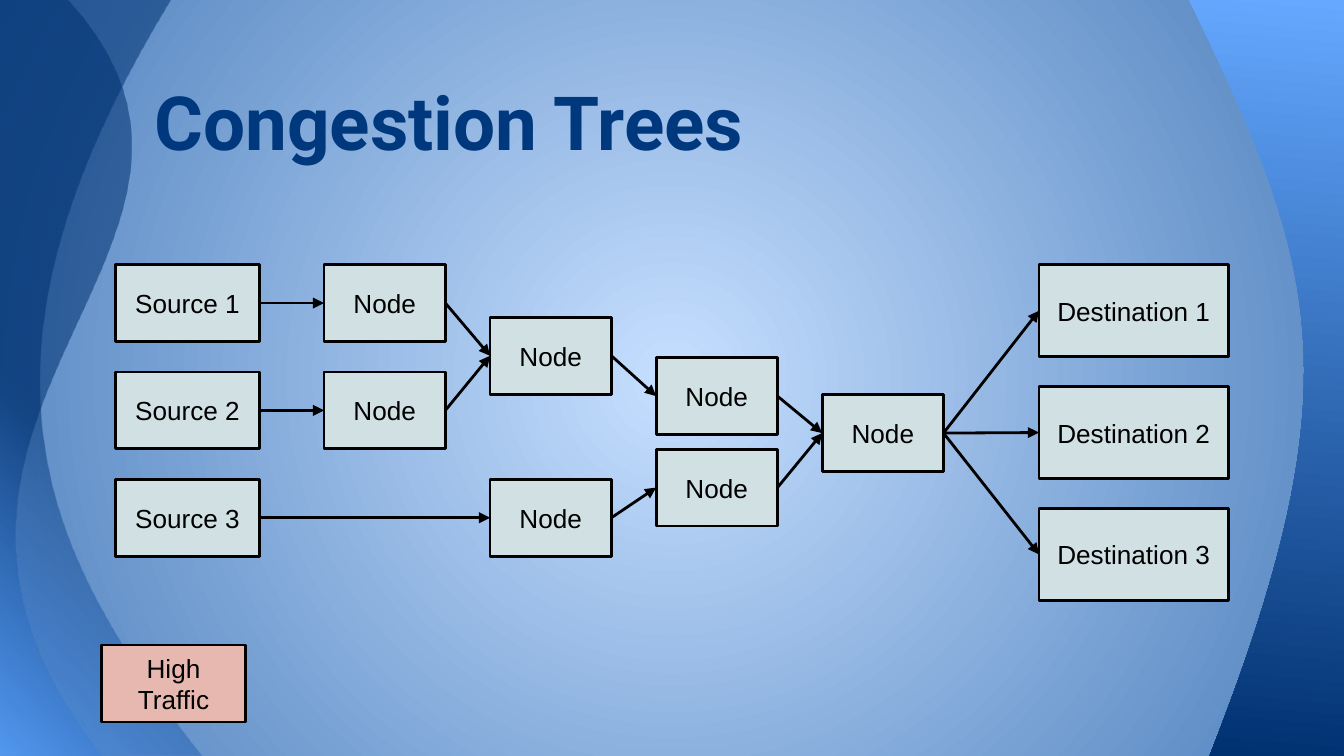
from lxml.etree import SubElement
from pptx import Presentation
from pptx.dml.color import RGBColor
from pptx.enum.shapes import MSO_CONNECTOR, MSO_SHAPE
from pptx.enum.text import MSO_ANCHOR, MSO_AUTO_SIZE, PP_ALIGN
from pptx.oxml import parse_xml
from pptx.oxml.ns import nsdecls, qn
from pptx.util import Pt

# Colours
BLACK = RGBColor(0x00, 0x00, 0x00)
TITLE_BLUE = RGBColor(0x00, 0x38, 0x7E)
NODE_FILL = RGBColor(0xD0, 0xE0, 0xE3)
TRAFFIC_FILL = RGBColor(0xE6, 0xB8, 0xAF)
PALE_BLUE = RGBColor(0xC6, 0xDF, 0xFF)
STEEL_BLUE = RGBColor(0x4F, 0x81, 0xBD)
BRIGHT_BLUE = RGBColor(0x54, 0x9F, 0xFF)
SKY_BLUE = RGBColor(0x65, 0xA8, 0xFF)
NAVY = RGBColor(0x00, 0x31, 0x71)

# Content: all lengths in points
WIDTH, HEIGHT = 720, 405
TITLE = "Congestion Trees"
SIZES = {"source": (77, 41.25), "node": (65, 41.25), "destination": (101.5, 49.5)}
FIRST_TOP = 141.75
SOURCE_LEFT, SOURCE_STEP = 62, 57.5
NODE_LEFT, NODE_STEP = 173.6, 88.95
DESTINATION_LEFT, DESTINATION_STEP = 556.6, 65.25
NODES = [  # name, column, top
    ("A1", 0, FIRST_TOP), ("A2", 0, FIRST_TOP + SOURCE_STEP),
    ("B1", 1, 170), ("B2", 1, FIRST_TOP + 2 * SOURCE_STEP),
    ("C1", 2, 191.6), ("C2", 2, 240.6),
    ("D", 3, 211.4),
]
LINKS = [
    ("Source 1", "A1"), ("Source 2", "A2"), ("Source 3", "B2"),
    ("A1", "B1"), ("A2", "B1"), ("B1", "C1"), ("B2", "C2"),
    ("C1", "D"), ("C2", "D"),
    ("D", "Destination 1"), ("D", "Destination 2"), ("D", "Destination 3"),
]

# Gradients: stops are (position, colour, opacity) in percent
LEFT_STOPS = [(0, BRIGHT_BLUE, 54), (41, NAVY, 54), (100, NAVY, 54)]
RIGHT_STOPS = [(0, SKY_BLUE, 100), (100, NAVY, 100)]
BACKGROUND_STOPS = [(0, PALE_BLUE, 100), (100, STEEL_BLUE, 100)]
DOWNWARD = '<a:lin ang="5700000" scaled="0"/>'


def circle(left, top, right, bottom):
    return (f'<a:path path="circle"><a:fillToRect l="{left}000" t="{top}000" '
            f'r="{right}000" b="{bottom}000"/></a:path>')


# Side bands: outer edge x, four Bezier points from top to bottom, stops, shading
BANDS = [
    (0, [(91.5, 0), (-27.5, 196), (24, 297.5), (108, 405)],
     LEFT_STOPS, circle(0, 100, 100, 0)),
    (0, [(36, 0), (156, 131), (-88, 222), (54, 405)],
     LEFT_STOPS, circle(0, 100, 100, 0)),
    (WIDTH, [(637, 0), (706, 141), (727, 204.5), (648, 405)],
     RIGHT_STOPS, DOWNWARD),
]


def set_gradient(properties, stops, shading):
    """Swap the solid fill inside properties for a gradient."""
    stop_xml = "".join(
        f'<a:gs pos="{position}000"><a:srgbClr val="{colour}">'
        f'<a:alpha val="{opacity}000"/></a:srgbClr></a:gs>'
        for position, colour, opacity in stops)
    gradient = parse_xml(f'<a:gradFill {nsdecls("a")} rotWithShape="1">'
                         f'<a:gsLst>{stop_xml}</a:gsLst>{shading}</a:gradFill>')
    properties.replace(properties.find(qn("a:solidFill")), gradient)


def bezier(points, steps=40):
    for step in range(steps + 1):
        t = step / steps
        weights = ((1 - t) ** 3, 3 * t * (1 - t) ** 2, 3 * t * t * (1 - t), t ** 3)
        yield tuple(Pt(sum(w * point[axis] for w, point in zip(weights, points)))
                    for axis in (0, 1))


def add_band(slide, edge, curve, stops, shading):
    builder = slide.shapes.build_freeform(Pt(edge), 0)
    builder.add_line_segments([*bezier(curve), (Pt(edge), Pt(HEIGHT))], close=True)
    band = builder.convert_to_shape()
    band.shadow.inherit = False
    band.line.fill.background()
    band.fill.solid()
    set_gradient(band.element.spPr, stops, shading)


def write(shape, text, font, size, colour, bold, anchor, alignment):
    frame = shape.text_frame
    frame.word_wrap = True
    frame.auto_size = MSO_AUTO_SIZE.NONE
    frame.vertical_anchor = anchor
    frame.margin_left = frame.margin_right = Pt(7.2)
    frame.margin_top = frame.margin_bottom = Pt(7.2)
    paragraph = frame.paragraphs[0]
    paragraph.alignment = alignment
    run = paragraph.add_run()
    run.text = text
    run.font.name, run.font.size, run.font.bold = font, Pt(size), bold
    run.font.color.rgb = colour


def add_box(slide, kind, text, left, top, fill=NODE_FILL):
    width, height = SIZES[kind]
    box = slide.shapes.add_shape(MSO_SHAPE.RECTANGLE, Pt(left), Pt(top),
                                 Pt(width), Pt(height))
    box.shadow.inherit = False
    box.fill.solid()
    box.fill.fore_color.rgb = fill
    box.line.color.rgb = BLACK
    box.line.width = Pt(1.5)
    write(box, text, "Arial", 14, BLACK, False, MSO_ANCHOR.MIDDLE, PP_ALIGN.CENTER)
    return box


def add_arrow(slide, start, end):
    arrow = slide.shapes.add_connector(MSO_CONNECTOR.STRAIGHT, 0, 0, 0, 0)
    arrow.begin_connect(start, 3)
    arrow.end_connect(end, 1)
    arrow.line.color.rgb = BLACK
    arrow.line.width = Pt(1.5)
    SubElement(arrow.line._get_or_add_ln(), qn("a:tailEnd"), type="triangle")
    SubElement(arrow.element.spPr, qn("a:effectLst"))


def main():
    presentation = Presentation()
    presentation.slide_width, presentation.slide_height = Pt(WIDTH), Pt(HEIGHT)
    slide = presentation.slides.add_slide(presentation.slide_layouts[5])

    # Background and side bands
    slide.background.fill.solid()
    set_gradient(slide.element.find(".//" + qn("p:bgPr")),
                 BACKGROUND_STOPS, circle(50, 50, 50, 50))
    for band in BANDS:
        add_band(slide, *band)

    # Title, in front of the bands
    title = slide.shapes.title
    title.left, title.top, title.width, title.height = (
        Pt(75.6), Pt(17.3), Pt(481), Pt(78.5))
    write(title, TITLE, "Roboto", 40, TITLE_BLUE, True, MSO_ANCHOR.BOTTOM, PP_ALIGN.LEFT)
    slide.shapes.element.append(title.element)

    # Boxes
    boxes = {}
    for row in range(3):
        source, destination = f"Source {row + 1}", f"Destination {row + 1}"
        boxes[source] = add_box(slide, "source", source, SOURCE_LEFT,
                                FIRST_TOP + row * SOURCE_STEP)
        boxes[destination] = add_box(slide, "destination", destination, DESTINATION_LEFT,
                                     FIRST_TOP + row * DESTINATION_STEP)
    for name, column, top in NODES:
        boxes[name] = add_box(slide, "node", "Node", NODE_LEFT + column * NODE_STEP, top)
    add_box(slide, "source", "High Traffic", 54.5, 345.6, TRAFFIC_FILL)

    # Arrows
    for start, end in LINKS:
        add_arrow(slide, boxes[start], boxes[end])

    presentation.save("out.pptx")


if __name__ == "__main__":
    main()
